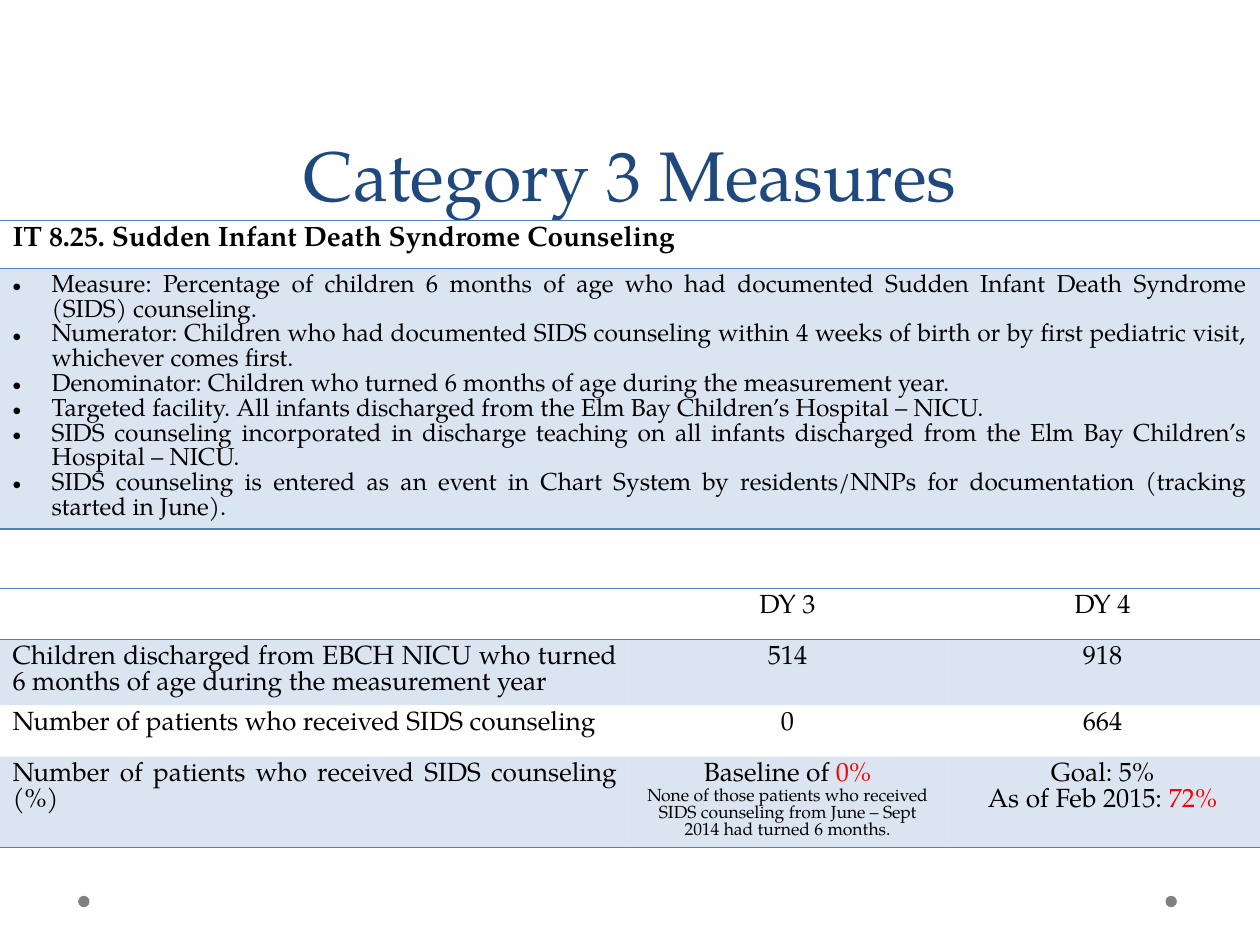
from lxml import etree
from pptx import Presentation
from pptx.dml.color import RGBColor
from pptx.enum import shapes, text
from pptx.oxml import ns
from pptx.util import Inches, Pt

NAVY = RGBColor(0x1F, 0x49, 0x7D)
BLUE = RGBColor(0x4F, 0x81, 0xBD)
GREY = RGBColor(0x80, 0x80, 0x80)
BLACK = RGBColor(0, 0, 0)
RED = RGBColor(0xFF, 0, 0)
FONT = "TeX Gyre Pagella"
PLAIN = "{2D5ABB26-0587-4C30-8999-92F81FD0307C}"  # no style, no grid
LEAD = {10: 9.7, 14: 14.15, 15: 14.9, 16: 15.5, 40: 58}  # line pitch by size
MID, JUST = text.PP_ALIGN.CENTER, text.PP_ALIGN.JUSTIFY


def write(para, runs, size, align, color=BLACK, bold=False):
    """Fill a paragraph; runs holding a value to stress come as (words, color)."""
    para.alignment = align
    para.line_spacing = Pt(LEAD[size])
    for item in runs:
        words, tint = item if isinstance(item, tuple) else (item, color)
        run = para.add_run()
        run.text = words
        run.font.name, run.font.size, run.font.bold = FONT, Pt(size), bold
        run.font.color.rgb = tint


def dress(cell, shade, sides):
    """Give a cell its tint and its blue rules, sides being T and/or B."""
    props = cell._tc.get_or_add_tcPr()
    if shade:
        cell.fill.solid()
        cell.fill.fore_color.rgb = BLUE
        tint = props.find(".//" + ns.qn("a:srgbClr"))
        etree.SubElement(tint, ns.qn("a:alpha"), val="20000")
    else:
        cell.fill.background()
    for spot, side in enumerate(sides):
        line = etree.Element(ns.qn("a:ln" + side), w="12700")
        fill = etree.SubElement(line, ns.qn("a:solidFill"))
        etree.SubElement(fill, ns.qn("a:srgbClr"), val=str(BLUE))
        props.insert(spot, line)


deck = Presentation()
deck.slide_width, deck.slide_height = Inches(10), Inches(7.5)
slide = deck.slides.add_slide(deck.slide_layouts[5])

# Footer dots
for left in (9.25, 0.62):
    dot = slide.shapes.add_shape(shapes.MSO_SHAPE.OVAL, Inches(left),
                                 Inches(7.11), Inches(0.09), Inches(0.09))
    dot.shadow.inherit = False
    dot.fill.solid()
    dot.fill.fore_color.rgb = GREY
    dot.line.fill.background()

# Title
title = slide.shapes.title
title.left, title.top = Inches(0.5), Inches(0.42)
title.width, title.height = Inches(9), Inches(1.33)
frame = title.text_frame
frame.vertical_anchor = text.MSO_ANCHOR.BOTTOM
frame.margin_bottom = Inches(0.04)
write(frame.paragraphs[0], ["Category 3 Measures"], 40, MID, NAVY)

# Table contents: each cell is a list of (size, runs) paragraphs
points = [
    "Measure: Percentage of children 6 months of age who had documented "
    "Sudden Infant Death Syndrome (SIDS) counseling.",
    "Numerator: Children who had documented SIDS counseling within 4 weeks "
    "of birth or by first pediatric visit, whichever comes first.",
    "Denominator: Children who turned 6 months of age during the measurement year.",
    "Targeted facility. All infants discharged from the Elm Bay Children’s "
    "Hospital – NICU.",
    "SIDS counseling incorporated in discharge teaching on all infants "
    "discharged from the Elm Bay Children’s Hospital – NICU.",
    "SIDS counseling is entered as an event in Chart System by residents/NNPs "
    "for documentation (tracking started in June).",
]
about = [
    [[(16, ["IT 8.25. Sudden Infant Death Syndrome Counseling"])]],
    [[(14, [point]) for point in points]],
]
counts = [
    [[], [(15, ["DY 3"])], [(15, ["DY 4"])]],
    [[(15, ["Children discharged from EBCH NICU who turned 6 months of age "
            "during the measurement year"])],
     [(15, ["514"])], [(15, ["918"])]],
    [[(15, ["Number of patients who received SIDS counseling"])],
     [(15, ["0"])], [(15, ["664"])]],
    [[(15, ["Number of patients who received SIDS counseling (%)"])],
     [(15, ["Baseline of ", ("0%", RED)]),
      (10, ["None of those patients who received SIDS counseling from "
            "June – Sept 2014 had turned 6 months."])],
     [(15, ["Goal: 5%"]), (15, ["As of Feb 2015: ", ("72%", RED)])]],
]

# Tables: top, column widths, row heights, contents
for top, wides, highs, rows in (
    (1.75, [10], [0.38, 2.07], about),
    (4.67, [5, 2.5, 2.5], [0.4, 0.52, 0.41, 0.72], counts),
):
    table = slide.shapes.add_table(len(rows), len(wides), 0, Inches(top),
                                   Inches(10), Inches(sum(highs))).table
    table._tbl.tblPr.find(ns.qn("a:tableStyleId")).text = PLAIN
    table.horz_banding = False
    table.first_row = False
    for col, wide in zip(table.columns, wides):
        col.width = Inches(wide)
    for r, cells in enumerate(rows):
        table.rows[r].height = Inches(highs[r])
        sides = "TB" if r == 0 else "B" if r == len(rows) - 1 else ""
        for c, paras in enumerate(cells):
            cell = table.cell(r, c)
            dress(cell, r % 2 == 1, sides)
            for n, (size, runs) in enumerate(paras):
                body = cell.text_frame
                para = body.add_paragraph() if n else body.paragraphs[0]
                write(para, runs, size, MID if c else JUST, bold=size == 16)
                if size == 14:  # bulleted list
                    props = para._p.get_or_add_pPr()
                    props.set("marL", str(Inches(0.31)))
                    props.set("indent", str(-Inches(0.31)))
                    etree.SubElement(props, ns.qn("a:buFont"), typeface="Arial")
                    etree.SubElement(props, ns.qn("a:buChar"), char="•")

deck.save("out.pptx")
